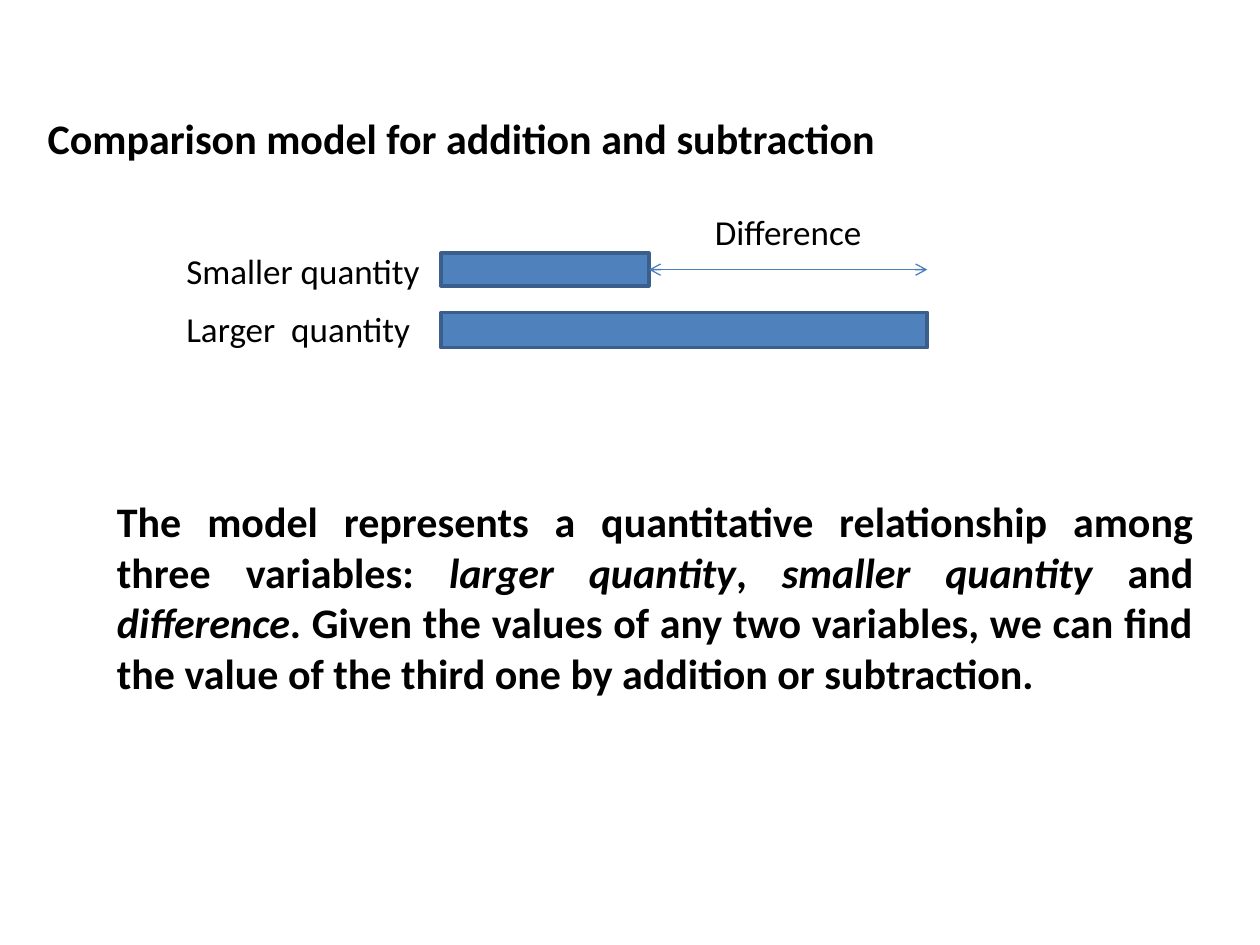
from lxml import etree
from pptx import Presentation
from pptx.dml.color import RGBColor
from pptx.enum.shapes import MSO_CONNECTOR, MSO_SHAPE
from pptx.enum.text import MSO_ANCHOR, PP_ALIGN
from pptx.oxml.ns import qn
from pptx.util import Inches, Pt

RECT = MSO_SHAPE.RECTANGLE
STRAIGHT = MSO_CONNECTOR.STRAIGHT
TOP, MIDDLE = MSO_ANCHOR.TOP, MSO_ANCHOR.MIDDLE
LEFT, CENTER, JUSTIFY = PP_ALIGN.LEFT, PP_ALIGN.CENTER, PP_ALIGN.JUSTIFY

FONT = "Calibri"
COLORS = {"text": "000000", "bar": "4F81BD", "border": "3A5F8C", "arrow": "4B7EBC"}

# The slide is a grid of 100 columns and 75 rows.
COLS, ROWS = 100, 75
WIDTH, HEIGHT = Inches(10), Inches(7.5)

LABEL_COL, LABEL_W, LABEL_H = 13.8, 22.8, 4.4
BAR_COL, SMALLER_W, LARGER_W = 35, 16.5, 38.6
SMALLER_END, LARGER_END = BAR_COL + SMALLER_W, BAR_COL + LARGER_W

EXPLANATION = [
    ("The model represents a quantitative relationship among three variables: ", False),
    ("larger quantity", True),
    (", ", False),
    ("smaller quantity", True),
    (" and ", False),
    ("difference", True),
    (". Given the values of any two variables, we can find the value of the "
     "third one by addition or subtraction.", False),
]


def x(cols):
    return round(WIDTH * cols / COLS)


def y(rows):
    return round(HEIGHT * rows / ROWS)


def rgb(name):
    return RGBColor.from_string(COLORS[name])


def add_text(s, col, row, w, h, parts, size=20, bold=False, align=LEFT, anchor=TOP):
    """Add a text box; parts is a list of (text, italic) pairs."""
    tf = s.shapes.add_textbox(x(col), y(row), x(w), y(h)).text_frame
    tf.word_wrap = True
    tf.vertical_anchor = anchor
    p = tf.paragraphs[0]
    p.alignment = align
    for text, italic in parts:
        r = p.add_run()
        r.text = text
        r.font.name = FONT
        r.font.size = Pt(size)
        r.font.bold = bold
        r.font.italic = italic
        r.font.color.rgb = rgb("text")


def add_bar(s, row, w, h):
    sp = s.shapes.add_shape(RECT, x(BAR_COL), y(row), x(w), y(h))
    sp.shadow.inherit = False
    sp.fill.solid()
    sp.fill.fore_color.rgb = rgb("bar")
    sp.line.color.rgb = rgb("border")
    sp.line.width = Pt(2)


def add_double_arrow(s, start, end, row):
    arrow = s.shapes.add_connector(STRAIGHT, x(start), y(row), x(end), y(row))
    arrow.line.color.rgb = rgb("arrow")
    arrow.line.width = Pt(0.75)
    ln = arrow.line._get_or_add_ln()
    for tag in ("a:headEnd", "a:tailEnd"):
        etree.SubElement(ln, qn(tag), type="arrow")
    etree.SubElement(arrow._element.spPr, qn("a:effectLst"))


def add_comparison(s):
    for text, row in (("Smaller quantity", 19.3), ("Larger  quantity", 23.9)):
        add_text(s, LABEL_COL, row, LABEL_W, LABEL_H, [(text, False)])
    add_bar(s, 20.1, SMALLER_W, 2.6)
    add_bar(s, 24.8, LARGER_W, 2.8)
    add_double_arrow(s, SMALLER_END, LARGER_END, 21.4)
    label_w = 18.9
    label_col = (SMALLER_END + LARGER_END - label_w) / 2
    add_text(s, label_col, 16.2, label_w, LABEL_H, [("Difference", False)], align=CENTER)


def main():
    prs = Presentation()
    prs.slide_width, prs.slide_height = WIDTH, HEIGHT
    s = prs.slides.add_slide(prs.slide_layouts[6])
    add_text(s, 2.8, 2.9, 95.3, 16.1,
             [("Comparison model for addition and subtraction", False)],
             size=24, bold=True, anchor=MIDDLE)
    add_comparison(s)
    add_text(s, 8.3, 39.1, 87.4, 16.5, EXPLANATION,
             size=24, bold=True, align=JUSTIFY, anchor=MIDDLE)
    prs.save("out.pptx")


if __name__ == "__main__":
    main()
